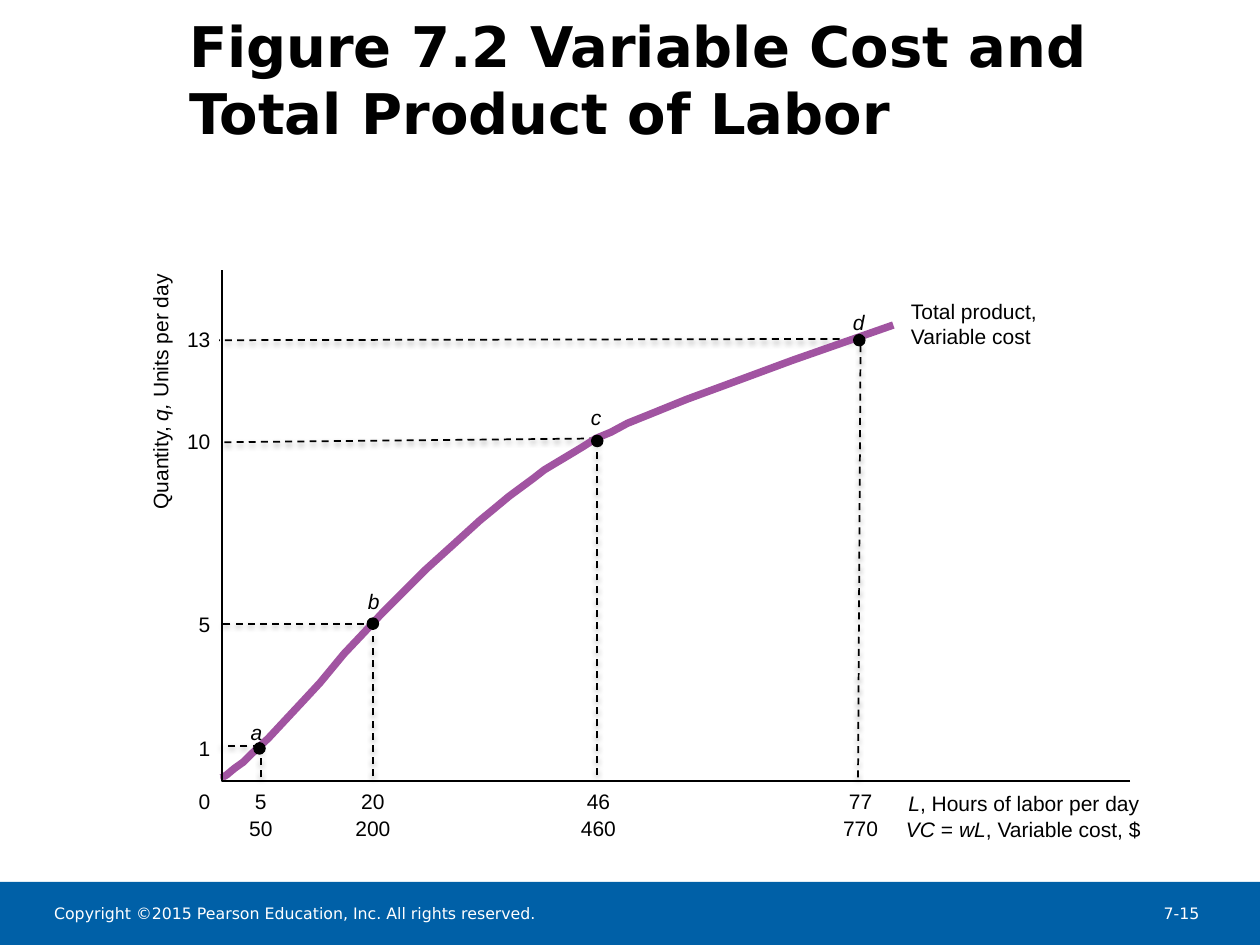
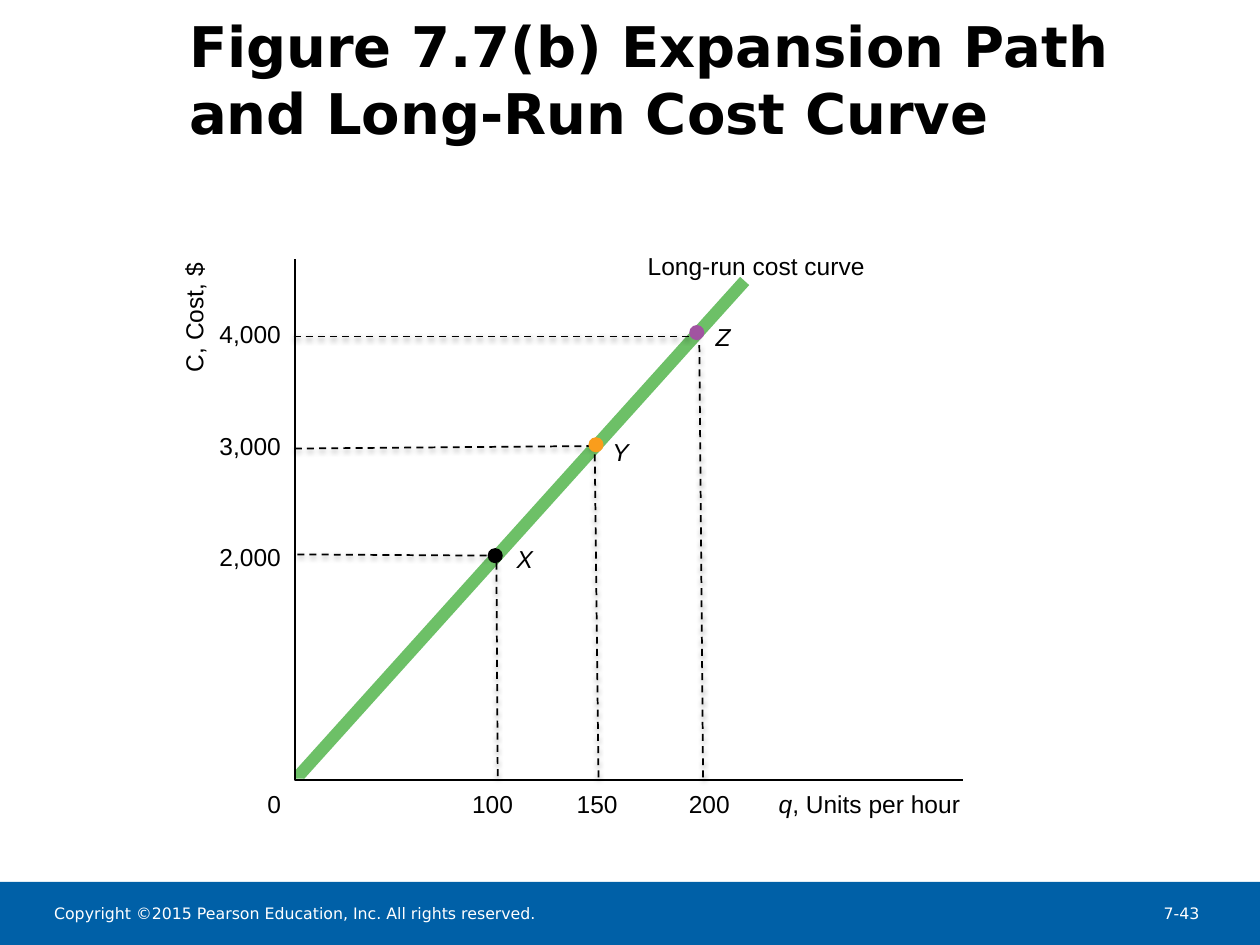
from dataclasses import dataclass

from lxml import etree
from pptx import Presentation
from pptx.dml.color import RGBColor
from pptx.enum.dml import MSO_LINE
from pptx.enum.shapes import MSO_CONNECTOR, MSO_SHAPE
from pptx.enum.text import MSO_ANCHOR, MSO_AUTO_SIZE, PP_ALIGN
from pptx.oxml.ns import qn
from pptx.util import Pt

PX = 9144  # 100 px to the inch
LEFT, CENTER, RIGHT = PP_ALIGN.LEFT, PP_ALIGN.CENTER, PP_ALIGN.RIGHT
STRAIGHT, DASH = MSO_CONNECTOR.STRAIGHT, MSO_LINE.DASH
RECT, OVAL = MSO_SHAPE.RECTANGLE, MSO_SHAPE.OVAL
TITLE_ONLY = 5


@dataclass(frozen=True)
class Theme:
    black = RGBColor(0, 0, 0)
    white = RGBColor(255, 255, 255)
    band = RGBColor(0x00, 0x60, 0xA7)
    purple = RGBColor(0xA1, 0x54, 0xA1)
    green = RGBColor(0x6D, 0xC0, 0x67)
    orange = RGBColor(0xF9, 0x9D, 0x1C)
    title = {"name": "DejaVu Sans", "size": Pt(32), "bold": True}
    footer = {"name": "DejaVu Sans", "size": Pt(9)}
    small_label = {"name": "Arial", "size": Pt(12)}
    large_label = {"name": "Arial", "size": Pt(14)}
    frame = {"margin_left": 0, "margin_top": 0, "margin_right": 0, "margin_bottom": 0,
             "word_wrap": True, "auto_size": MSO_AUTO_SIZE.NONE}


theme = Theme()
COPYRIGHT = "Copyright ©2015 Pearson Education, Inc. All rights reserved."


def write(holder, runs, font_format, color=theme.black, align=LEFT, anchor=MSO_ANCHOR.TOP):
    """Fill a text holder with (text, italic) runs in one paragraph."""
    frame = holder.text_frame
    for key, value in {**theme.frame, "vertical_anchor": anchor}.items():
        setattr(frame, key, value)
    paragraph = frame.paragraphs[0]
    paragraph.alignment = align
    for text, italic in runs:
        run = paragraph.add_run()
        run.text = text
        for key, value in {**font_format, "italic": italic}.items():
            setattr(run.font, key, value)
        run.font.color.rgb = color


def draw_path(shapes, points, color, width, guide=False):
    """Draw an open path; a guide is dashed and casts a soft shadow."""
    if len(points) == 2:
        (x1, y1), (x2, y2) = points
        path = shapes.add_connector(STRAIGHT, x1 * PX, y1 * PX, x2 * PX, y2 * PX)
        effects = etree.SubElement(path._element.spPr, qn("a:effectLst"))
    else:
        builder = shapes.build_freeform(*points[0], scale=PX)
        builder.add_line_segments(points[1:], close=False)
        path = builder.convert_to_shape()
        path.fill.background()
        path.shadow.inherit = False
    path.line.color.rgb = color
    path.line.width = Pt(width)
    if guide:
        path.line.dash_style = DASH
        shadow = etree.SubElement(effects, qn("a:outerShdw"), blurRad=str(Pt(3.1)),
                                  dist=str(Pt(1.6)), dir="5400000", rotWithShape="0")
        shadow_color = etree.SubElement(shadow, qn("a:srgbClr"), val="000000")
        etree.SubElement(shadow_color, qn("a:alpha"), val="38000")


product_curve = [
    (175, 618), (180, 615), (186, 610), (193, 605), (199, 599), (213, 586), (227, 571),
    (241, 556), (254, 542), (273, 519), (290, 501), (303, 487), (320, 470), (338, 452),
    (359, 433), (381, 413), (392, 404), (404, 394), (423, 380), (432, 373), (442, 367),
    (452, 361), (462, 355), (473, 348), (485, 343), (498, 336), (513, 330), (545, 317),
    (583, 303), (629, 286), (709, 258)]

figures = [
    {
        "title": "Figure 7.2 Variable Cost and Total Product of Labor",
        "number": "7-15",
        "label": theme.small_label,
        "guides_below": [
            [(474, 615), (474, 349)], [(296, 616), (296, 499)], [(207, 617), (207, 592)],
            [(676, 269), (174, 270)], [(473, 348), (175, 351)], [(289, 495), (174, 495)],
            [(206, 592), (175, 592)]],
        "curve": (product_curve, theme.purple, 4.25),
        "guides_above": [[(681, 617), (683, 268)]],
        "origin_masks": [(172, 615, 3, 8), (174, 619, 7, 3)],
        "axes": ([(897, 620), (176, 620), (176, 214)], theme.black, 1),
        "dot_size": 10,
        # name, dot centre, label corner, colour
        "points": [("a", (206, 594), (199, 571), theme.black),
                   ("b", (296, 495), (292, 467), theme.black),
                   ("c", (474, 350), (469, 321), theme.black),
                   ("d", (682, 270), (677, 246), theme.black)],
        "x_ticks": [(207, ["5", "50"]), (296, ["20", "200"]),
                    (475, ["46", "460"]), (683, ["77", "770"])],
        "y_tick_right": 167,
        "y_ticks": [("13", 259), ("10", 340), ("5", 485), ("1", 584), ("0", 626)],
        "captions": [
            ((723, 237, 115, 42), [("Total product, Variable cost", False)]),
            ((721, 627, 205, 22), [("L", True), (", Hours of labor per day", False)]),
            ((719, 648, 205, 22), [("VC", True), (" = ", False), ("wL", True),
                                   (", Variable cost, $", False)])],
        "y_axis": ((27, 301, 200, 20), [("Quantity, ", False), ("q,", True),
                                        (" Units per day", False)]),
    },
    {
        "title": "Figure 7.7(b) Expansion Path and Long-Run Cost Curve",
        "number": "7-43",
        "label": theme.large_label,
        "guides_below": [],
        "curve": ([(235, 618), (591, 223)], theme.green, 7),
        "guides_above": [
            [(236, 440), (390, 441)], [(234, 356), (473, 354)], [(233, 267), (554, 267)],
            [(395, 616), (394, 445)], [(475, 617), (472, 354)], [(558, 617), (555, 270)]],
        "origin_masks": [(230, 618, 11, 6), (228, 612, 6, 11)],
        "axes": ([(764, 619), (234, 619), (234, 206)], theme.black, 1.25),
        "dot_size": 12,
        "points": [("X", (393, 441), (410, 432), theme.black),
                   ("Y", (473, 353), (486, 347), theme.orange),
                   ("Z", (553, 264), (568, 256), theme.purple)],
        "x_ticks": [(391, ["100"]), (474, ["150"]), (563, ["200"])],
        "y_tick_right": 223,
        "y_ticks": [("4,000", 253), ("3,000", 342), ("2,000", 430), ("0", 626)],
        "captions": [
            ((514, 199, 195, 28), [("Long-run cost curve", False)]),
            ((618, 626, 170, 28), [("q", True), (", Units per hour", False)])],
        "y_axis": ((104, 240, 100, 24), [("C, Cost, $", False)]),
    },
]

presentation = Presentation()
presentation.slide_width, presentation.slide_height = 1000 * PX, 750 * PX

for figure in figures:
    slide = presentation.slides.add_slide(presentation.slide_layouts[TITLE_ONLY])
    shapes, label = slide.shapes, figure["label"]

    title = shapes.title
    title.left, title.top, title.width, title.height = 150 * PX, 0, 825 * PX, 125 * PX
    write(title, [(figure["title"], False)], theme.title, anchor=MSO_ANCHOR.MIDDLE)

    # Curve, dashed guides and axes
    for points in figure["guides_below"]:
        draw_path(shapes, points, theme.black, 1, guide=True)
    draw_path(shapes, *figure["curve"])
    for points in figure["guides_above"]:
        draw_path(shapes, points, theme.black, 1, guide=True)

    # Footer band, masks at the origin and dots on the curve
    size = figure["dot_size"]
    solids = [(RECT, (0, 700, 1000, 50), theme.band)]
    solids += [(RECT, box, theme.white) for box in figure["origin_masks"]]
    solids += [(OVAL, (x - size // 2, y - size // 2, size, size), color)
               for _, (x, y), _, color in figure["points"]]
    for preset, box, color in solids:
        solid = shapes.add_shape(preset, *(n * PX for n in box))
        solid.fill.solid()
        solid.fill.fore_color.rgb = color
        solid.line.fill.background()
        solid.shadow.inherit = False
    draw_path(shapes, *figure["axes"])

    # Every text box: box, runs, font, colour, alignment
    texts = [
        ((43, 717, 590, 20), [(COPYRIGHT, False)], theme.footer, theme.white, LEFT),
        ((872, 717, 80, 20), [(figure["number"], False)], theme.footer, theme.white, RIGHT)]
    texts += [((x, y, 23, 24), [(name, True)], label, theme.black, LEFT)
              for name, _, (x, y), _ in figure["points"]]
    texts += [((x - 25, 626 + 21 * row, 50, 22), [(value, False)], label, theme.black, CENTER)
              for x, values in figure["x_ticks"] for row, value in enumerate(values)]
    texts += [((figure["y_tick_right"] - 60, y, 60, 24), [(value, False)], label,
               theme.black, RIGHT) for value, y in figure["y_ticks"]]
    texts += [(box, runs, label, theme.black, LEFT) for box, runs in figure["captions"]]
    texts.append((*figure["y_axis"], label, theme.black, CENTER))
    for box, *content in texts:
        text_box = shapes.add_textbox(*(n * PX for n in box))
        write(text_box, *content)
    text_box.rotation = 270  # the y-axis caption comes last

presentation.save("out.pptx")
